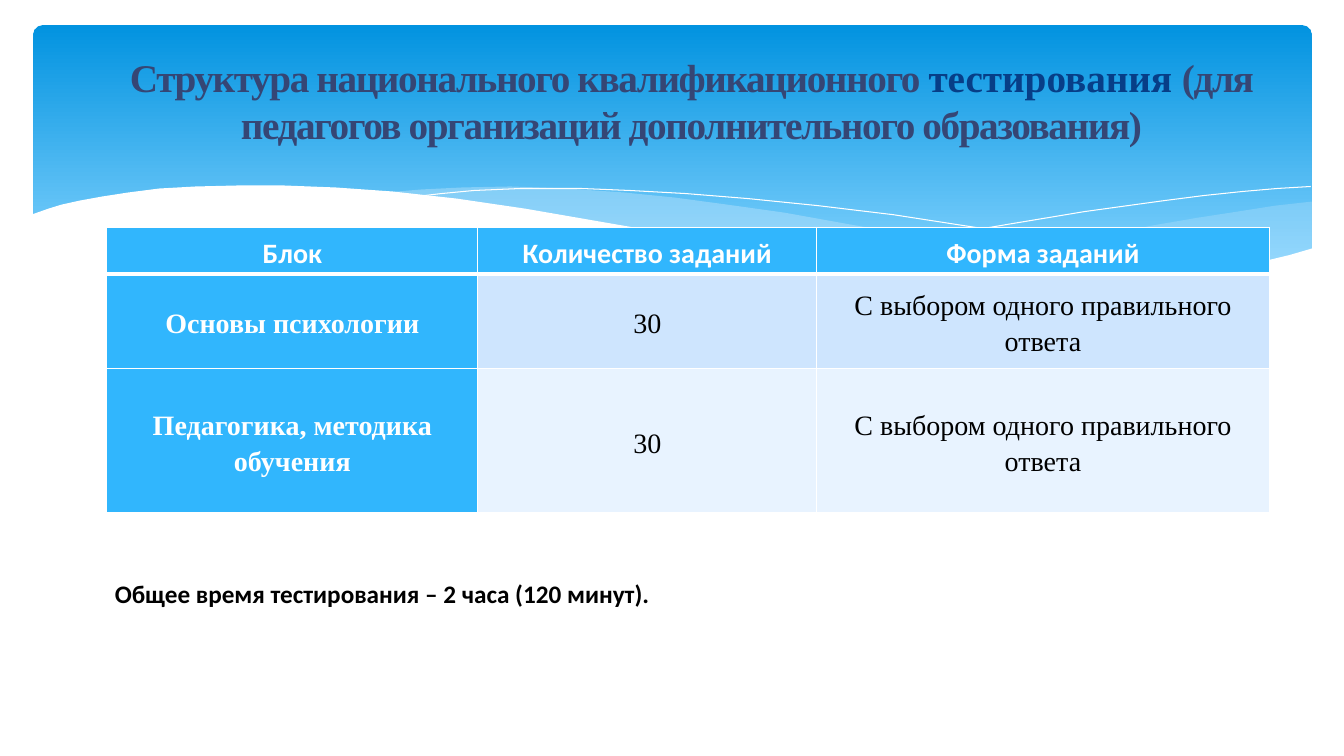
from lxml import etree
from pptx import Presentation
from pptx import util as u
from pptx.dml.color import RGBColor
from pptx.enum import shapes, text
from pptx.oxml.ns import qn

COLORS = {
    "white": "FFFFFF", "black": "000000", "heading": "354675", "accent": "073E87",
    "sky_top": "0293E0", "sky_bottom": "83D3FE", "wave": "C6E7FC",
    "block": "31B6FD", "row_dark": "CEE5FE", "row_light": "E8F3FF",
}
SERIF, SANS = "Times New Roman", "Calibri"

HEADING = [
    ("Структура национального квалификационного ", "heading", -1),
    ("тестирования ", "accent", 0),
    ("(для педагогов организаций дополнительного образования)", "heading", -1),
]
TESTS = [
    ("Блок", "Количество заданий", "Форма заданий"),
    ("Основы психологии", "30", "С выбором одного правильного ответа"),
    ("Педагогика, методика обучения", "30", "С выбором одного правильного ответа"),
]
DURATION = "Общее время тестирования – 2 часа (120 минут)."
COLUMN_WIDTHS = (3.68, 3.36, 4.49)
ROW_HEIGHTS = (0.46, 0.94, 1.43)
ROW_FILLS = ("block", "row_dark", "row_light")

WAVES = [
    ([(13.01, 2), (12.65, 2.04), (12.27, 2.1), (11.88, 2.16), (11.47, 2.23),
      (10.73, 2.37), (10.05, 2.48), (9.41, 2.57), (8.82, 2.65), (9.21, 2.69),
      (9.58, 2.72), (9.93, 2.75), (10.25, 2.77), (10.71, 2.78), (11.26, 2.77),
      (11.63, 2.74), (11.96, 2.7), (12.28, 2.65), (12.66, 2.57), (13.01, 2.47)],
     "wave", 29),
    ([(11.9, 2.73), (11.16, 2.65), (10.34, 2.54), (9.41, 2.4), (8.39, 2.22),
      (7.78, 2.11), (7.21, 2.03), (6.69, 1.96), (6.19, 1.91), (5.6, 1.87),
      (5.06, 1.85), (4.59, 1.86), (4.18, 1.88), (3.82, 1.91), (4.31, 1.96),
      (4.83, 2.03), (5.39, 2.11), (5.99, 2.22), (6.54, 2.32), (7.06, 2.4),
      (7.55, 2.48), (8.02, 2.55), (8.46, 2.61), (8.87, 2.66), (9.26, 2.7),
      (9.63, 2.74), (9.98, 2.76), (10.46, 2.78), (11.18, 2.78), (11.56, 2.76)],
     "wave", 40),
    ([(4.12, 1.95), (4.38, 1.92), (4.7, 1.89), (5.16, 1.87), (5.77, 1.87),
      (6.25, 1.89), (6.8, 1.92), (7.42, 1.97), (8.11, 2.04), (8.86, 2.13),
      (9.7, 2.26), (10.6, 2.41), (11.58, 2.61), (12.1, 2.72)],
     None, 100),
    ([(8.18, 2.57), (8.7, 2.46), (9.27, 2.35), (9.97, 2.23), (10.75, 2.1),
      (11.55, 1.99), (11.94, 1.94), (12.32, 1.9), (12.67, 1.87), (13, 1.85)],
     None, 100),
    ([(13.03, 2.46), (12.79, 2.53), (12.54, 2.59), (12.27, 2.65), (11.98, 2.69),
      (11.67, 2.73), (11.34, 2.75), (10.97, 2.77), (10.58, 2.76), (10.15, 2.75),
      (9.69, 2.72), (9.18, 2.68), (8.63, 2.62), (8.04, 2.54), (7.4, 2.45),
      (6.71, 2.33), (5.96, 2.2), (5.21, 2.07), (4.53, 1.97), (3.9, 1.9),
      (3.33, 1.86), (2.82, 1.84), (2.35, 1.84), (1.94, 1.85), (1.58, 1.87),
      (1.27, 1.91), (1.01, 1.95), (0.79, 1.99), (0.61, 2.03), (0.48, 2.07),
      (0.31, 2.13), (0.31, 3.29), (13.03, 3.29)],
     "white", 100),
]


def rgb(name):
    return RGBColor.from_string(COLORS[name])


def write(frame, words, size=20, font=SERIF, color="black", bold=True,
          align=text.PP_ALIGN.CENTER, leading=1.0, tracking=0):
    paragraph = frame.paragraphs[0]
    paragraph.alignment, paragraph.line_spacing = align, leading
    run = paragraph.add_run()
    run.text = words
    run.font.size, run.font.name, run.font.bold = u.Pt(size), font, bold
    run.font.color.rgb = rgb(color)
    run._r.get_or_add_rPr().set("spc", str(tracking * 100))


def draw_sky(slide):
    sky = slide.shapes.add_shape(shapes.MSO_SHAPE.ROUNDED_RECTANGLE, u.Inches(0.33),
                                 u.Inches(0.25), u.Inches(12.68), u.Inches(2.7))
    sky.adjustments[0] = 0.034
    sky.shadow.inherit = False
    sky.line.fill.background()
    sky.fill.gradient()
    sky.fill.gradient_angle = 270
    for stop, position, name in zip(sky.fill.gradient_stops, (0, 0.9),
                                    ("sky_top", "sky_bottom")):
        stop.position, stop.color.rgb = position, rgb(name)


def draw_wave(slide, points, fill, opacity):
    start, *rest = [(u.Inches(x), u.Inches(y)) for x, y in points]
    builder = slide.shapes.build_freeform(*start)
    builder.add_line_segments(rest, close=fill is not None)
    wave = builder.convert_to_shape()
    wave.shadow.inherit = False
    if fill is None:
        wave.fill.background()
        wave.line.color.rgb, wave.line.width = rgb("white"), u.Pt(0)
        return
    wave.line.fill.background()
    wave.fill.solid()
    wave.fill.fore_color.rgb = rgb(fill)
    if opacity < 100:
        tint = wave._element.spPr.find(qn("a:solidFill"))[0]
        etree.SubElement(tint, qn("a:alpha"), val=str(opacity * 1000))


def border(cell, widths):
    properties = cell._tc.get_or_add_tcPr()
    for index, (side, width) in enumerate(zip("LRTB", widths)):
        edge = etree.Element(qn(f"a:ln{side}"), w=str(u.Pt(width)))
        paint = etree.SubElement(edge, qn("a:solidFill"))
        etree.SubElement(paint, qn("a:srgbClr"), val=COLORS["white"])
        properties.insert(index, edge)


def draw_tests(slide):
    tests = slide.shapes.add_table(
        len(TESTS), len(COLUMN_WIDTHS), u.Inches(1.06), u.Inches(2.26),
        u.Inches(sum(COLUMN_WIDTHS)), u.Inches(sum(ROW_HEIGHTS))).table
    tests.horz_banding = False
    for column, width in zip(tests.columns, COLUMN_WIDTHS):
        column.width = u.Inches(width)
    for r, (entries, height) in enumerate(zip(TESTS, ROW_HEIGHTS)):
        tests.rows[r].height = u.Inches(height)
        for c, entry in enumerate(entries):
            cell = tests.cell(r, c)
            heading = r == 0 or c == 0
            cell.margin_left = cell.margin_right = u.Inches(0.01 if r else 0.07)
            cell.margin_top, cell.margin_bottom = u.Inches(0.01 if r else 0), 0
            cell.vertical_anchor = text.MSO_ANCHOR.MIDDLE
            cell.fill.solid()
            cell.fill.fore_color.rgb = rgb("block" if heading else ROW_FILLS[r])
            border(cell, (1, 1, 3 if r == 1 else 1, 3 if r == 0 else 1))
            write(cell.text_frame, entry, font=SERIF if r else SANS, bold=heading,
                  color="white" if heading else "black", leading=1.15)


def main():
    deck = Presentation()
    deck.slide_width, deck.slide_height = u.Inches(13.33), u.Inches(7.5)
    slide = deck.slides.add_slide(deck.slide_layouts[5])

    draw_sky(slide)
    for wave in WAVES:
        draw_wave(slide, *wave)

    title = slide.shapes.title
    title.left, title.top = u.Inches(0.94), u.Inches(0.11)
    title.width, title.height = u.Inches(11.83), u.Inches(1.78)
    title.text_frame.auto_size = text.MSO_AUTO_SIZE.NONE
    title.text_frame.vertical_anchor = text.MSO_ANCHOR.MIDDLE
    for words, color, tracking in HEADING:
        write(title.text_frame, words, size=28, color=color, tracking=tracking)
    slide.shapes._spTree.append(title._element)

    duration = slide.shapes.add_textbox(u.Inches(1.04), u.Inches(5.69),
                                        u.Inches(11.54), u.Inches(0.67))
    duration.text_frame.word_wrap = True
    write(duration.text_frame, DURATION, size=18, font=SANS, align=text.PP_ALIGN.LEFT)

    draw_tests(slide)
    deck.save("out.pptx")


if __name__ == "__main__":
    main()
